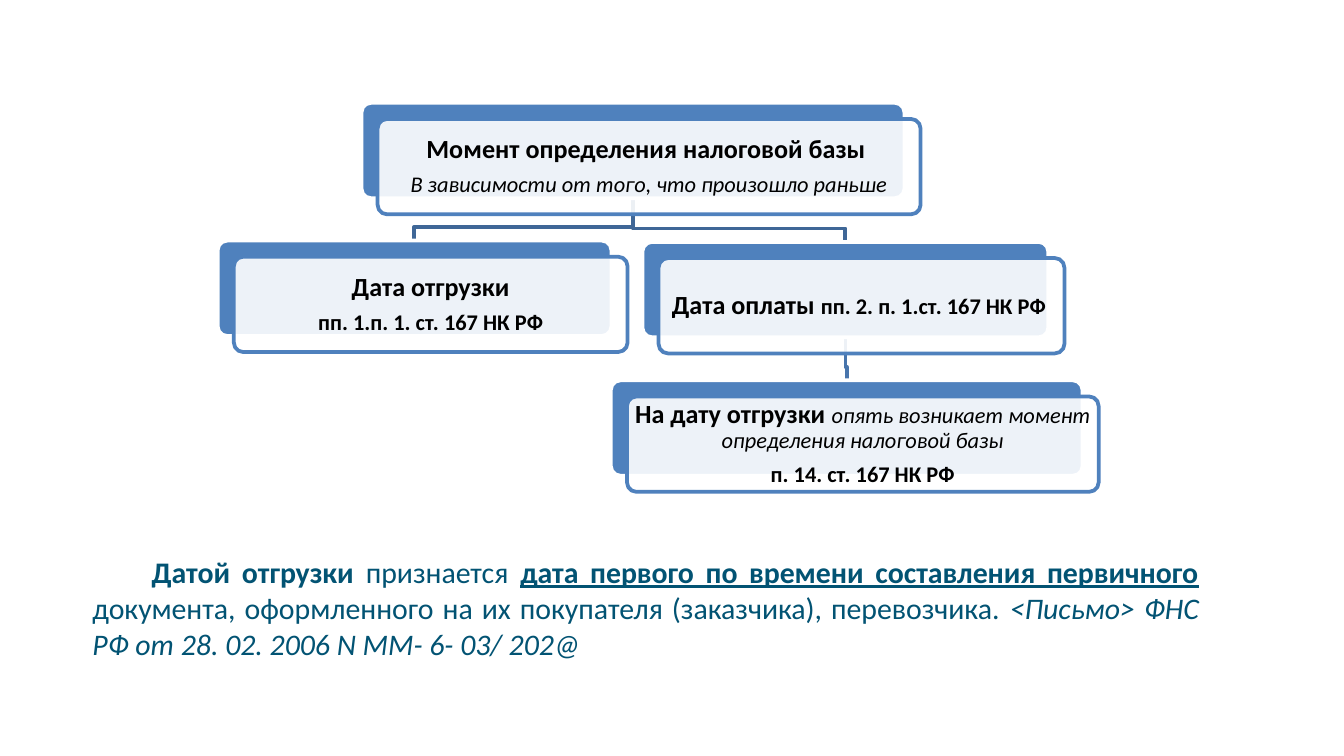
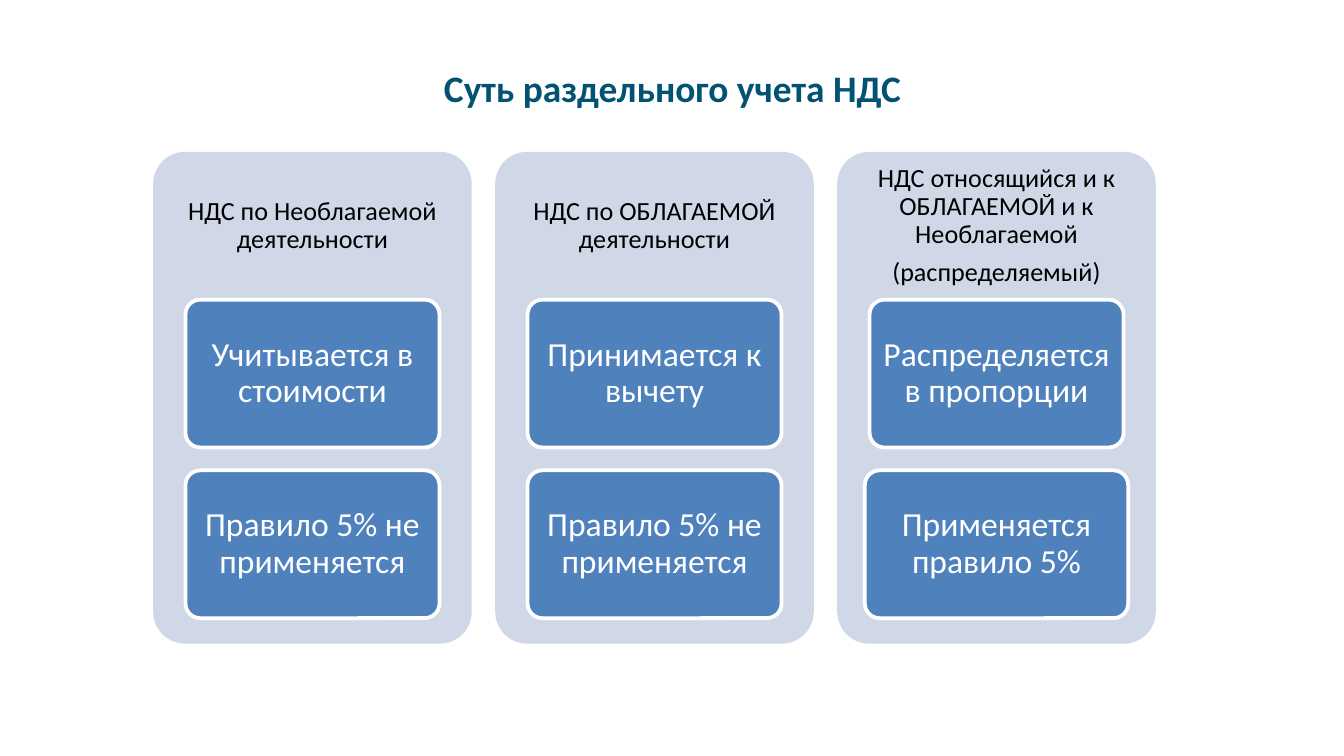
from lxml import etree
from pptx import Presentation
from pptx.dml.color import RGBColor
from pptx.enum.shapes import MSO_SHAPE
from pptx.enum.text import MSO_ANCHOR, MSO_AUTO_SIZE, PP_ALIGN
from pptx.oxml.ns import qn
from pptx.util import Pt

PX = 4572  # EMU per px, 200 px to the inch
FONT = "Calibri"
BLUE = RGBColor(0x4F, 0x81, 0xBD)
PANEL = RGBColor(0xD0, 0xD8, 0xE8)
TEAL = RGBColor(0x02, 0x53, 0x73)
LINK = RGBColor(0x3F, 0x67, 0x97)
LINK_LOW = RGBColor(0x48, 0x75, 0xAC)
WHITE = RGBColor(0xFF, 0xFF, 0xFF)
BLACK = RGBColor(0, 0, 0)


def add_box(s, x, y, w, h, fill, line=None):
    sp = s.shapes.add_shape(MSO_SHAPE.ROUNDED_RECTANGLE, x * PX, y * PX, w * PX, h * PX)
    sp.adjustments[0] = 0.1
    sp.shadow.inherit = False
    sp.fill.solid()
    sp.fill.fore_color.rgb = fill
    if line is None:
        sp.line.fill.background()
    else:
        sp.line.color.rgb = line
        sp.line.width = Pt(2)
    return sp


def write(tf, paragraphs, color, inset_x, inset_y, spacing=0.9, after=5):
    """Each paragraph is a list of (text, size, style letters from "biu")."""
    tf.word_wrap = True
    tf.vertical_anchor = MSO_ANCHOR.MIDDLE
    tf.margin_left = tf.margin_right = inset_x * PX
    tf.margin_top = tf.margin_bottom = inset_y * PX
    for i, runs in enumerate(paragraphs):
        p = tf.paragraphs[0] if i == 0 else tf.add_paragraph()
        p.alignment = PP_ALIGN.CENTER
        p.line_spacing = spacing
        p.space_after = Pt(after)
        for text, size, style in runs:
            r = p.add_run()
            r.text = text
            r.font.name = FONT
            r.font.size = Pt(size)
            r.font.color.rgb = color
            r.font.bold = "b" in style
            r.font.italic = "i" in style
            r.font.underline = "u" in style


prs = Presentation()
prs.slide_width = 2000 * PX
prs.slide_height = 1125 * PX

# Slide 1: when the tax base arises
s = prs.slides.add_slide(prs.slide_layouts[6])

# Elbow links, behind the boxes
links = [
    ([(1258, 502), (1258, 546), (1260, 546), (1260, 566)], LINK_LOW),
    ([(942, 294), (942, 340), (1258, 340), (1258, 360)], LINK),
    ([(942, 294), (942, 338), (616, 338), (616, 358)], LINK),
]
for points, color in links:
    builder = s.shapes.build_freeform(*points[0], scale=PX)
    builder.add_line_segments(points[1:], close=False)
    sp = builder.convert_to_shape()
    sp.shadow.inherit = False
    sp.fill.background()
    sp.line.color.rgb = color
    sp.line.width = Pt(2)

# Tree boxes: a blue plate with a translucent white card shifted over it
NODE_H, SHIFT = 142, 24
nodes = [
    (538, 153, 808, [
        [("Момент определения налоговой базы ", 14, "b")],
        [("В зависимости от того, что произошло раньше", 12, "i")]]),
    (324, 358, 586, [
        [("Дата отгрузки", 14, "b")],
        [("пп. 1.п. 1. ст. 167 НК РФ", 12, "b")]]),
    (956, 360, 604, [
        [("Дата оплаты ", 14, "b"), ("пп. 2. п. 1.ст. 167 НК РФ ", 12, "b")]]),
    (909, 566, 702, [
        [("На дату отгрузки ", 14, "b"),
         ("опять возникает момент определения налоговой базы", 12, "i")],
        [("п. 14. ст. 167 НК РФ", 12, "b")]]),
]
for x, y, w, paragraphs in nodes:
    add_box(s, x, y, w, NODE_H, BLUE, WHITE)
    card = add_box(s, x + SHIFT, y + SHIFT, w, NODE_H, WHITE, BLUE)
    rgb = card.fill._xPr.find(qn("a:solidFill")).find(qn("a:srgbClr"))
    etree.SubElement(rgb, qn("a:alpha")).set("val", "90000")
    write(card.text_frame, paragraphs, BLACK, 5, 8)

# Definition below the tree
note = s.shapes.add_textbox(118 * PX, 814 * PX, 1686 * PX, 182 * PX)
tf = note.text_frame
write(tf, [[
    ("Датой отгрузки ", 16, "b"),
    ("признается ", 16, ""),
    ("дата первого по времени составления первичного ", 16, "bu"),
    ("документа, оформленного на их покупателя (заказчика), перевозчика. ", 16, ""),
    ("<Письмо> ФНС РФ от 28. 02. 2006 N ММ- 6- 03/ 202@", 16, "i"),
]], TEAL, 20, 10, spacing=1.0, after=0)
tf.vertical_anchor = MSO_ANCHOR.TOP
tf.auto_size = MSO_AUTO_SIZE.SHAPE_TO_FIT_TEXT
p = tf.paragraphs[0]
p.alignment = PP_ALIGN.JUSTIFY
p._p.get_or_add_pPr().set("indent", str(88 * PX))

# Slide 2: separate VAT accounting
s = prs.slides.add_slide(prs.slide_layouts[5])
title = s.shapes.title
title.left, title.top, title.width, title.height = 390 * PX, 36 * PX, 1222 * PX, 188 * PX
write(title.text_frame, [[("Суть раздельного учета НДС", 20, "b")]], TEAL, 20, 10,
      spacing=1.0, after=0)

# Three columns: panel, heading and two cards, the last card slightly wider
COL_X, COL_Y, COL_W, COL_H, COL_STEP = 228, 226, 474, 732, 509
CARD_W, CARD_H, CARD_STEP = 378, 220, 254
columns = [
    (["НДС по Необлагаемой деятельности"],
     [("Учитывается в стоимости", CARD_W), ("Правило 5% не применяется", CARD_W)]),
    (["НДС по ОБЛАГАЕМОЙ деятельности"],
     [("Принимается к вычету", CARD_W), ("Правило 5% не применяется", CARD_W)]),
    (["НДС относящийся и к ОБЛАГАЕМОЙ и к Необлагаемой", "(распределяемый)"],
     [("Распределяется в пропорции", CARD_W), ("Применяется правило 5%", 392)]),
]
for i, (heading, cards) in enumerate(columns):
    x = COL_X + i * COL_STEP
    add_box(s, x, COL_Y, COL_W, COL_H, PANEL)
    head = s.shapes.add_textbox(x * PX, COL_Y * PX, COL_W * PX, CARD_H * PX)
    write(head.text_frame, [[(line, 14, "")] for line in heading], BLACK, 12, 12)
    for j, (text, w) in enumerate(cards):
        y = COL_Y + CARD_H + j * CARD_STEP
        card = add_box(s, x + (COL_W - w) // 2, y, w, CARD_H, BLUE, WHITE)
        write(card.text_frame, [[(text, 18, "")]], WHITE, 4, 2)

prs.save("out.pptx")
